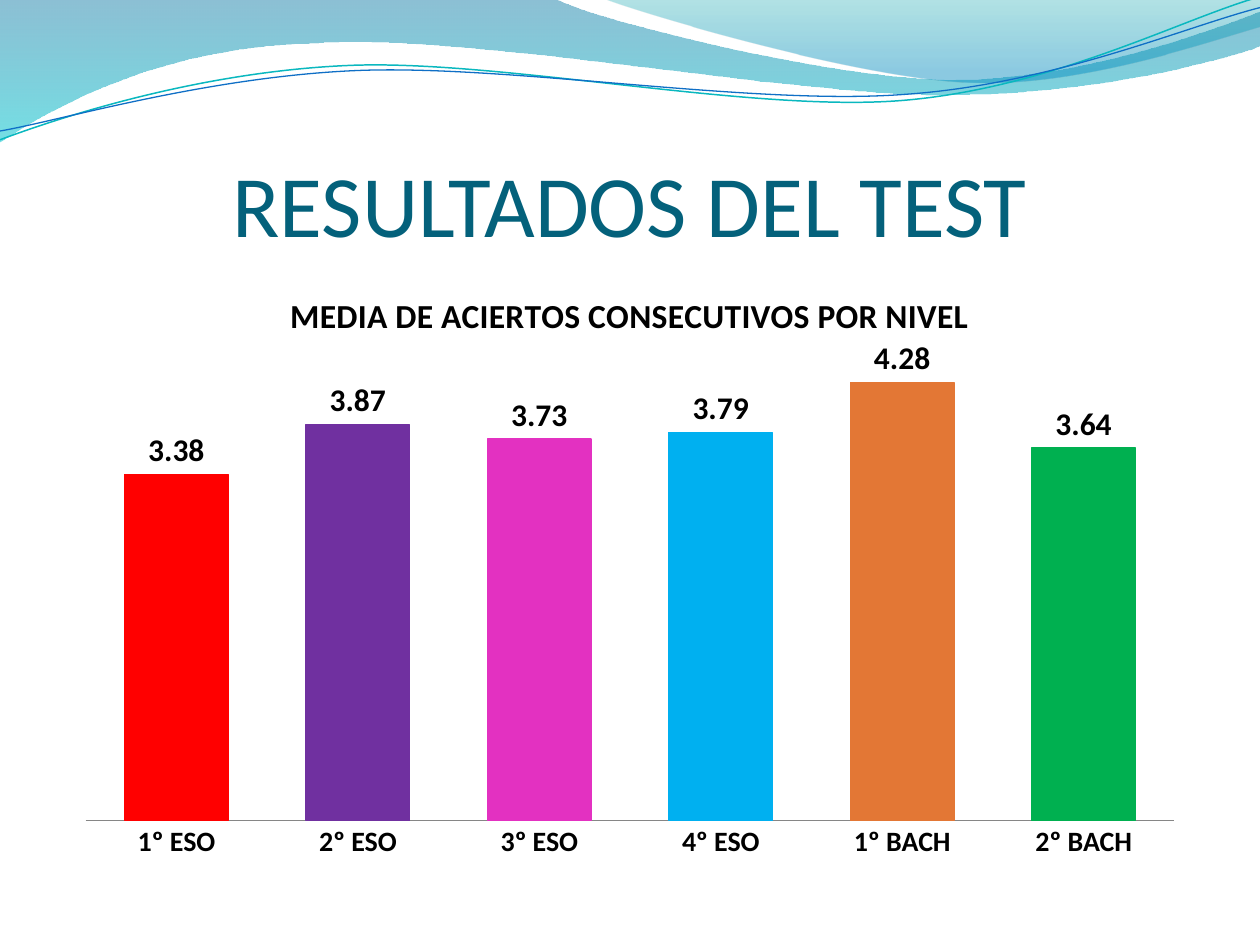
from dataclasses import dataclass
from math import cos, radians, sin

from lxml import etree
from pptx import Presentation
from pptx.chart.data import CategoryChartData
from pptx.dml.color import RGBColor
from pptx.enum import chart as chart_enum, text
from pptx.oxml import ns
from pptx.util import Inches, Pt

FONT = "Calibri"


@dataclass
class Stop:
    position: float
    color: str
    opacity: int


@dataclass
class Wave:
    """A start point, then segments of one point (line) or three (Bezier)."""
    box: tuple
    start: tuple
    segments: list
    stops: tuple = ()
    line_color: str = ""
    line_width: float = 0
    rotation: float = 0


@dataclass
class Level:
    name: str
    mean: float
    color: str


WAVES = [
    Wave((-0.01, -0.01, 10.02, 1.14), (0, 0), [
        [(4.4, -0.01)],
        [(4.76, 0.17), (6.64, 0.63), (7.58, 0.63)],
        [(8.53, 0.63), (9.58, 0.26), (10, 0.09)],
        [(10.01, 0.36)],
        [(9.83, 0.44), (8.7, 0.76), (7.46, 0.75)],
        [(6.22, 0.75), (3.82, 0.28), (2.57, 0.34)],
        [(1.29, 0.36), (0.46, 0.83), (-0.01, 1.13)],
        [(0, 0)],
    ], stops=(Stop(0, "0074A1", 45), Stop(1, "00C6CF", 55))),
    Wave((4.79, -0.01, 5.21, 0.7), (4.79, -0.01), [
        [(5.09, 0.11), (6.82, 0.62), (7.69, 0.65)],
        [(8.56, 0.69), (9.61, 0.32), (10, 0.21)],
        [(10, 0)],
        [(4.79, -0.01)],
    ], stops=(Stop(0, "00A1A9", 30), Stop(0.8, "008BBF", 45))),
    Wave((-0.02, 0.22, 10.02, 0.71), (0, 1.11), [
        [(0.48, 0.93), (1.58, 0.57), (2.77, 0.52)],
        [(3.95, 0.47), (5.93, 0.89), (7.13, 0.8)],
        [(8.33, 0.71), (9.38, 0.15), (9.98, -0.02)],
    ], line_color="0AB8BF", line_width=0.85, rotation=357.3),
    Wave((-0.02, 0.3, 10.03, 0.58), (0, 1.04), [
        [(0.47, 0.96), (1.64, 0.61), (2.83, 0.56)],
        [(4.03, 0.51), (5.97, 0.84), (7.17, 0.75)],
        [(8.36, 0.67), (9.41, 0.21), (10, 0.06)],
    ], line_color="0F6FC6", line_width=0.75, rotation=357.3),
]

LEVELS = [
    Level("1º ESO", 3.38, "FF0000"),
    Level("2º ESO", 3.87, "7030A0"),
    Level("3º ESO", 3.73, "E331C1"),
    Level("4º ESO", 3.79, "00B0F0"),
    Level("1º BACH", 4.28, "E37735"),
    Level("2º BACH", 3.64, "00B050"),
]


def rgb(color: str) -> RGBColor:
    return RGBColor.from_string(color)


def style_font(font, size: float, color: str, bold: bool = False) -> None:
    font.name, font.size, font.bold = FONT, Pt(size), bold
    font.color.rgb = rgb(color)


def paint(chart_format, fill_color: str, line_color: str) -> None:
    chart_format.fill.solid()
    chart_format.fill.fore_color.rgb = rgb(fill_color)
    chart_format.line.color.rgb = rgb(line_color)
    chart_format.line.width = Pt(0.75)


def to_local(wave: Wave, point: tuple) -> tuple:
    """Turn a slide point into the unrotated frame of the wave."""
    left, top, width, height = wave.box
    x, y = point[0] - left - width / 2, point[1] - top - height / 2
    angle = radians(-wave.rotation)
    return (Inches(x * cos(angle) - y * sin(angle) + width / 2),
            Inches(x * sin(angle) + y * cos(angle) + height / 2))


def draw_curves(shape, wave: Wave) -> None:
    """Replace the straight outline of a freeform with Bezier curves."""
    outline = next(shape.element.iter(ns.qn("a:path")))
    for child in list(outline):
        outline.remove(child)
    outline.set("w", str(Inches(wave.box[2])))
    outline.set("h", str(Inches(wave.box[3])))
    for segment in [[wave.start], *wave.segments]:
        tag = "a:cubicBezTo" if len(segment) == 3 else "a:lnTo"
        command = etree.SubElement(outline, ns.qn(tag if len(outline) else "a:moveTo"))
        for point in segment:
            x, y = to_local(wave, point)
            etree.SubElement(command, ns.qn("a:pt"), x=str(x), y=str(y))
    if wave.stops:
        etree.SubElement(outline, ns.qn("a:close"))


def add_wave(slide, wave: Wave) -> None:
    left, top, width, height = map(Inches, wave.box)
    builder = slide.shapes.build_freeform(left, top, scale=1.0)
    builder.add_line_segments([(left + width, top + height)], close=False)
    shape = builder.convert_to_shape()
    draw_curves(shape, wave)
    shape.rotation = wave.rotation
    shape.shadow.inherit = False
    if not wave.stops:
        shape.fill.background()
        shape.line.color.rgb = rgb(wave.line_color)
        shape.line.width = Pt(wave.line_width)
        return
    shape.line.fill.background()
    shape.fill.gradient()
    shape.fill.gradient_angle = 270
    for gradient_stop, stop in zip(shape.fill.gradient_stops, wave.stops):
        gradient_stop.position = stop.position
        gradient_stop.color.rgb = rgb(stop.color)
    for color, stop in zip(shape.element.iter(ns.qn("a:srgbClr")), wave.stops):
        etree.SubElement(color, ns.qn("a:alpha"), val=str(stop.opacity * 1000))


def add_title(slide) -> None:
    box = slide.shapes.add_textbox(Inches(0.5), Inches(0.77), Inches(9), Inches(1.25))
    frame = box.text_frame
    frame.word_wrap = True
    frame.vertical_anchor = text.MSO_ANCHOR.BOTTOM
    frame.margin_left = frame.margin_right = frame.margin_bottom = 0
    paragraph = frame.paragraphs[0]
    paragraph.alignment = text.PP_ALIGN.CENTER
    run = paragraph.add_run()
    run.text = "RESULTADOS DEL TEST"
    style_font(run.font, 50, "04617B")


def add_level_chart(slide) -> None:
    data = CategoryChartData(number_format="0.00")
    data.categories = [level.name for level in LEVELS]
    data.add_series("Series 1", [level.mean for level in LEVELS])
    chart = slide.shapes.add_chart(
        chart_enum.XL_CHART_TYPE.COLUMN_CLUSTERED,
        Inches(0.5), Inches(2.12), Inches(9), Inches(4.8), data).chart
    style_font(chart.font, 16, "000000")
    chart.has_legend = False

    chart.has_title = True
    run = chart.chart_title.text_frame.paragraphs[0].add_run()
    run.text = "MEDIA DE ACIERTOS CONSECUTIVOS POR NIVEL"
    style_font(run.font, 19.2, "000000", bold=True)

    levels_axis, means_axis = chart.category_axis, chart.value_axis
    levels_axis.major_tick_mark = chart_enum.XL_TICK_MARK.NONE
    style_font(levels_axis.tick_labels.font, 16, "000000", bold=True)
    levels_axis.format.line.color.rgb = rgb("868686")
    levels_axis.format.line.width = Pt(0.75)
    means_axis.visible = False
    means_axis.has_major_gridlines = False
    means_axis.minimum_scale, means_axis.maximum_scale = 0, 4.5

    plot = chart.plots[0]
    plot.gap_width = 75
    plot.vary_by_categories = False
    series = plot.series[0]
    paint(series.format, "9BBB59", "9BBB59")
    for index, level in enumerate(LEVELS):
        paint(series.points[index].format, level.color, level.color)
    labels = series.data_labels
    labels.show_value = True
    labels.number_format, labels.number_format_is_linked = "0.00", False
    labels.position = chart_enum.XL_LABEL_POSITION.OUTSIDE_END
    style_font(labels.font, 18, "000000", bold=True)


def main() -> None:
    presentation = Presentation()
    presentation.slide_width, presentation.slide_height = Inches(10), Inches(7.5)
    slide = presentation.slides.add_slide(presentation.slide_layouts[6])
    for wave in WAVES:
        add_wave(slide, wave)
    add_title(slide)
    add_level_chart(slide)
    presentation.save("out.pptx")


if __name__ == "__main__":
    main()
